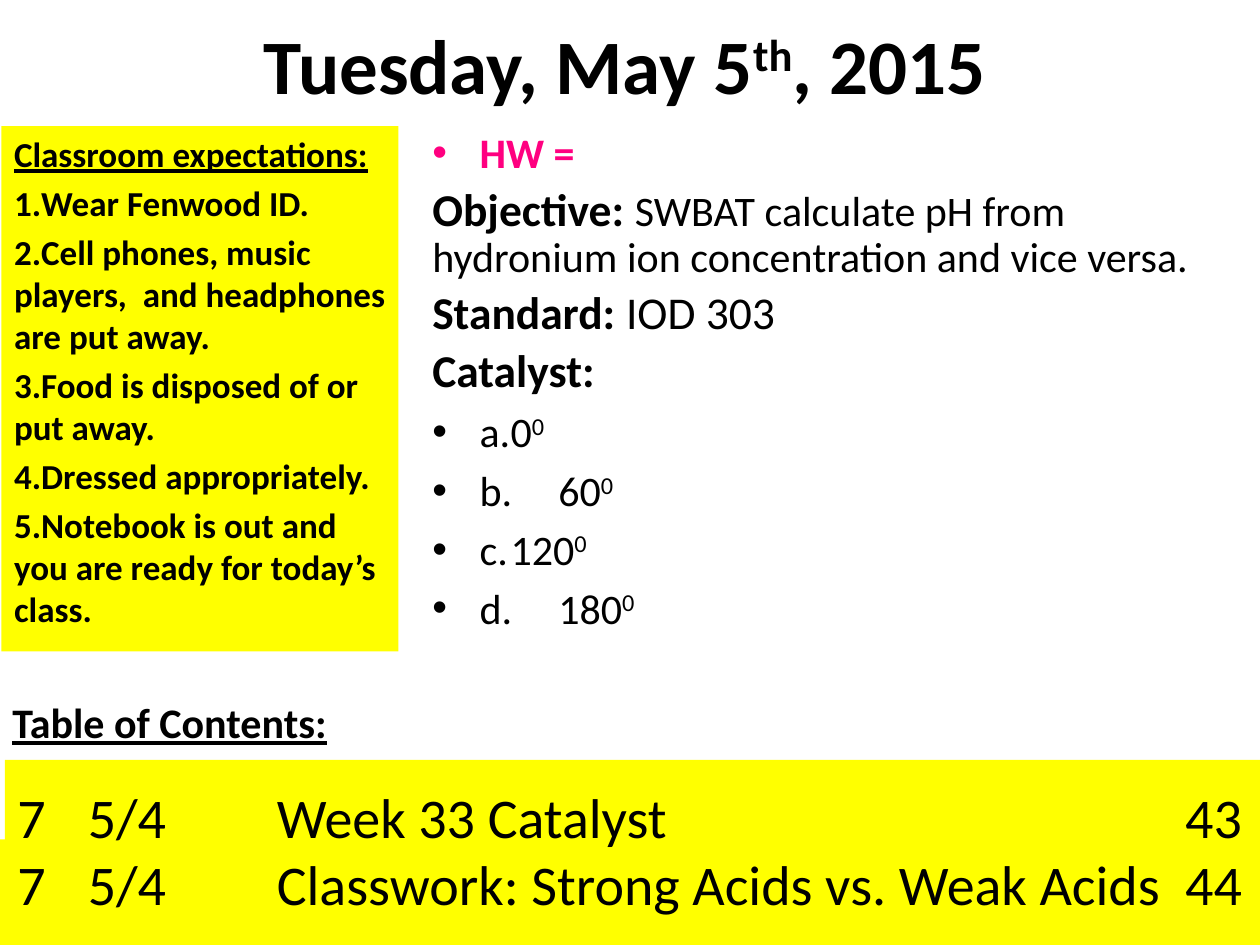
from pptx import Presentation
from pptx.dml.color import RGBColor
from pptx.enum.shapes import MSO_SHAPE
from pptx.enum.text import MSO_ANCHOR, MSO_AUTO_SIZE, PP_ALIGN
from pptx.oxml.ns import qn
from pptx.util import Cm, Pt
from lxml.etree import SubElement

BLACK = RGBColor(0x00, 0x00, 0x00)
PINK = RGBColor(0xFF, 0x00, 0x80)
YELLOW = RGBColor(0xFF, 0xFF, 0x00)
FONT = "Calibri"

EXPECTATIONS = [
    "Wear Fenwood ID.",
    "Cell phones, music players,  and headphones are put away.",
    "Food is disposed of or put away.",
    "Dressed appropriately.",
    "Notebook is out and you are ready for today’s class.",
]
ANGLES = [("a.", 0), ("b.", 60), ("c.", 120), ("d.", 180)]
CONTENTS = [
    ("7", "5/4", "Week 33 Catalyst", "43"),
    ("7", "5/4", "Classwork: Strong Acids vs. Weak Acids", "44"),
]


def place(shape, left, top, width, height):
    shape.left, shape.top = Cm(left), Cm(top)
    shape.width, shape.height = Cm(width), Cm(height)


def set_frame(shape, anchor):
    frame = shape.text_frame
    frame.word_wrap = True
    frame.auto_size = MSO_AUTO_SIZE.NONE
    frame.vertical_anchor = anchor
    return frame


def next_para(frame):
    first = frame.paragraphs[0]
    return frame.add_paragraph() if first.runs else first


def add_span(para, text, size, bold=False, underline=False, color=BLACK, raised=False):
    span = para.add_run()
    span.text = text
    font = span.font
    font.name, font.size, font.bold = FONT, Pt(size), bold
    font.underline = underline
    font.color.rgb = color
    if raised:
        font._element.set("baseline", "30000")


def set_flush(para, numbered=False):
    props = para._p.get_or_add_pPr()
    props.set("marL", "0")
    props.set("indent", "0")
    if numbered:
        SubElement(props, qn("a:buAutoNum"), type="arabicPeriod")
    else:
        SubElement(props, qn("a:buNone"))


def set_tabs(para, stops):
    tabs = SubElement(para._p.get_or_add_pPr(), qn("a:tabLst"))
    for position, align in stops:
        SubElement(tabs, qn("a:tab"), pos=str(int(position)), algn=align)


def add_band(page, left, top, width, height):
    band = page.shapes.add_shape(
        MSO_SHAPE.RECTANGLE, Cm(left), Cm(top), Cm(width), Cm(height))
    band.shadow.inherit = False
    band.fill.solid()
    band.fill.fore_color.rgb = YELLOW
    band.line.fill.background()
    return band


def fill_title(title):
    place(title, 1.27, 0, 22.66, 2.34)
    para = next_para(set_frame(title, MSO_ANCHOR.BOTTOM))
    para.alignment = PP_ALIGN.CENTER
    add_span(para, "Tuesday, May 5", 44, bold=True)
    add_span(para, "th", 44, bold=True, raised=True)
    add_span(para, ", 2015", 44, bold=True)


def fill_expectations(box):
    place(box, 0.03, 2.54, 8, 10.59)
    box.fill.solid()
    box.fill.fore_color.rgb = YELLOW
    frame = set_frame(box, MSO_ANCHOR.TOP)
    heading = next_para(frame)
    set_flush(heading)
    add_span(heading, "Classroom expectations:", 20, bold=True, underline=True)
    for rule in EXPECTATIONS:
        para = next_para(frame)
        set_flush(para, numbered=True)
        add_span(para, rule, 20, bold=True)


def fill_lesson(box):
    place(box, 8.46, 2.54, 16.94, 12.78)
    frame = set_frame(box, MSO_ANCHOR.TOP)
    homework = next_para(frame)
    homework.line_spacing = 0.9
    add_span(homework, "HW =", 24, bold=True, color=PINK)
    for label, detail, size in [
        ("Objective: ", "SWBAT calculate pH from hydronium ion concentration"
                        " and vice versa.", 24),
        ("Standard: ", "IOD 303", 26),
        ("Catalyst:", "", 26),
    ]:
        para = next_para(frame)
        para.line_spacing = 0.9
        set_flush(para)
        add_span(para, label, 26, bold=True)
        if detail:
            add_span(para, detail, size)
    for letter, degrees in ANGLES:
        para = next_para(frame)
        set_tabs(para, [(Cm(1.58), "l"), (Cm(2.54), "l")])
        add_span(para, f"{letter}\t{degrees}", 24)
        add_span(para, "0", 24, raised=True)


def add_contents(page):
    add_band(page, 0, 16.92, 25.4, 2.13)
    box = page.shapes.add_textbox(Cm(0), Cm(12.88), Cm(7.98), Cm(2.31))
    heading = next_para(set_frame(box, MSO_ANCHOR.BOTTOM))
    add_span(heading, "Table of Contents:", 24, bold=True, underline=True)

    frame = set_frame(add_band(page, 0.1, 15.32, 25.4, 3.63), MSO_ANCHOR.MIDDLE)
    for entry in CONTENTS:
        para = next_para(frame)
        para.alignment = PP_ALIGN.LEFT
        set_tabs(para, [(Cm(1.42), "l"), (Cm(5.23), "l"), (Cm(24.69), "r")])
        add_span(para, "\t".join(entry), 32)


def main():
    deck = Presentation()
    deck.slide_width, deck.slide_height = Cm(25.4), Cm(19.05)
    page = deck.slides.add_slide(deck.slide_layouts[3])
    title, lesson, expectations = list(page.placeholders)[:3]
    fill_title(title)
    fill_lesson(lesson)
    fill_expectations(expectations)
    add_contents(page)
    deck.save("out.pptx")


if __name__ == "__main__":
    main()
